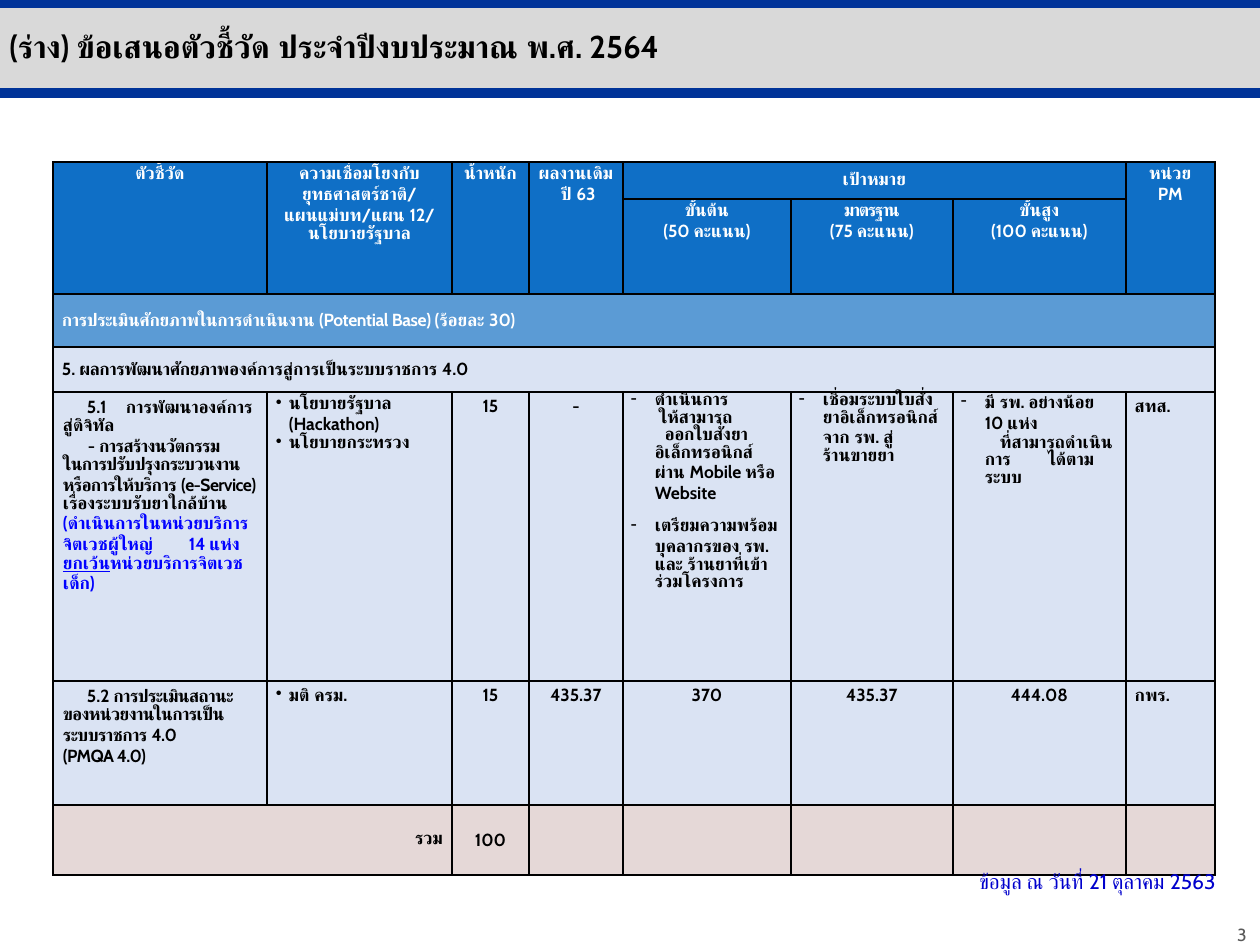
"""Build the slide of proposed indicators for fiscal year 2564."""
import lxml.etree
import pptx
import pptx.dml.color
import pptx.enum.shapes
import pptx.enum.text
import pptx.oxml.ns
import pptx.util

ALIGN = {"l": pptx.enum.text.PP_ALIGN.LEFT, "c": pptx.enum.text.PP_ALIGN.CENTER,
         "r": pptx.enum.text.PP_ALIGN.RIGHT}
MIDDLE = pptx.enum.text.MSO_ANCHOR.MIDDLE
TOP = pptx.enum.text.MSO_ANCHOR.TOP
FONT = "Cabin"
BLUE, BAND, PALE, PINK = "0F6FC6", "5B9BD5", "DAE3F3", "E5D8D7"
NAVY, GREY, NOTE = "003399", "D9D9D9", "0000FF"
TIGHT, SLIGHT = {"spc": -30}, {"spc": -20}


def para(*runs, **opts):
    return runs, opts


def bullet(text, char="•", left=13, after=0):
    return para(text, left=left, first=-left, bullet=char, after=after)


def dash(text, after=8):
    return bullet(text, "-", 24, after)


def more(text, first=0, after=0, **opts):
    return para(text, left=24, first=first, after=after, **opts)


TITLE = "(ร่าง) ข้อเสนอตัวชี้วัด ประจำปีงบประมาณ พ.ศ. 2564"
DATE = "ข้อมูล ณ วันที่ 21 ตุลาคม 2563"
TEXT_BOXES = [
    ((-3, 21, 1086, 50), TITLE, "l", 18, "000000", True, TOP),
    ((975, 910, 284, 50), "3", "r", 10, "595959", False, MIDDLE),
    ((842, 862, 386, 38), DATE, "r", 12, "0000CC", False, TOP),
]
COLUMNS = [214, 185, 77, 94, 168, 162, 173, 89]
ROWS = [37, 95, 53, 45, 289, 124, 70]
ROW_FILLS = [BLUE, BLUE, BAND, PALE, PALE, PALE, PINK]
MERGES = [(0, 0, 1, 0), (0, 1, 1, 1), (0, 2, 1, 2), (0, 3, 1, 3), (0, 4, 0, 6),
          (0, 7, 1, 7), (2, 0, 2, 7), (3, 0, 3, 7), (6, 0, 6, 1)]
MIDDLE_CELLS = [(0, 4), (2, 0), (3, 0), (6, 0), (6, 2)]
DASH_CELLS = [(4, 4), (4, 5), (4, 6)]
LEFT_CELLS = [(2, 0), (3, 0)] + [(r, c) for r in (4, 5) for c in (0, 1, 7)] + DASH_CELLS
CELLS = {
    (0, 0): ["ตัวชี้วัด"],
    (0, 1): ["ความเชื่อมโยงกับ", "ยุทธศาสตร์ชาติ/", "แผนแม่บท/แผน 12/ นโยบายรัฐบาล"],
    (0, 2): ["น้ำหนัก"],
    (0, 3): ["ผลงานเดิม", " ปี 63"],
    (0, 4): ["เป้าหมาย"],
    (0, 7): ["หน่วย PM"],
    (1, 4): ["ขั้นต้น", "(50 คะแนน)"],
    (1, 5): [para(("มาตรฐาน", {"spc": -80})), "(75 คะแนน)"],
    (1, 6): ["ขั้นสูง", "(100 คะแนน)"],
    (2, 0): [para(("การประเมินศักยภาพในการดำเนินงาน (Potential Base) ", SLIGHT), "(ร้อยละ 30)")],
    (3, 0): [para("5. ", ("ผลการพัฒนาศักยภาพ", SLIGHT), "องค์การสู่การเป็นระบบราชการ 4.0")],
    (4, 0): [
        para("5.1 \tการพัฒนาองค์การสู่ดิจิทัล", first=24, tab=126),
        para("- ", ("การสร้างนวัตกรรม", TIGHT), first=25),
        para(("ในการปรับปรุงกระบวนงาน หรือการให้บริการ (e-Service)", TIGHT),
             " เรื่องระบบรับยาใกล้บ้าน"),
        para("(ดำเนินการในหน่วยบริการจิตเวชผู้ใหญ่\t14 แห่ง ", ("ยกเว้น", {"u": True}),
             "หน่วยบริการจิตเวชเด็ก)", color=NOTE, tab=110),
    ],
    (4, 1): [bullet("นโยบายรัฐบาล"), para("(Hackathon)", left=13), bullet("นโยบายกระทรวง")],
    (4, 2): ["15"],
    (4, 3): ["-"],
    (4, 4): [dash("ดำเนินการ", 0), more("ให้สามารถ", 4),
             more("ออกใบสั่งยาอิเล็กทรอนิกส์ผ่าน Mobile หรือ Website", 10, 8),
             dash("เตรียมความพร้อมบุคลากรของ รพ. และ ร้านยาที่เข้าร่วมโครงการ")],
    (4, 5): [dash("เชื่อมระบบใบสั่งยาอิเล็กทรอนิกส์ จาก รพ. สู่", 0), more("ร้านขายยา", 0, 8)],
    (4, 6): [dash("มี รพ. อย่างน้อย", 0), more("10 แห่ง"),
             more("ที่สามารถดำเนินการ\tได้ตามระบบ", 15, 8, tab=104)],
    (4, 7): ["สทส."],
    (5, 0): [para("5.2 ", ("การประเมินสถานะของหน่วยงานในการเป็นระบบราชการ 4.0", TIGHT), first=24),
             para(("(PMQA 4.0)", TIGHT))],
    (5, 1): [bullet("มติ ครม.")],
    (5, 2): ["15"],
    (5, 3): ["435.37"],
    (5, 4): ["370"],
    (5, 5): ["435.37"],
    (5, 6): ["444.08"],
    (5, 7): ["กพร."],
    (6, 0): ["รวม"],
    (6, 2): ["100"],
}


def px(n):
    return pptx.util.Emu(round(n * 914400 / 126))


def rgb(value):
    return pptx.dml.color.RGBColor.from_string(value)


def sub(parent, tag, **attrs):
    e = lxml.etree.SubElement(parent, pptx.oxml.ns.qn(tag))
    for key, value in attrs.items():
        e.set(key, str(value))
    return e


def set_font(font, size, color, bold):
    font.name, font.size, font.bold = FONT, pptx.util.Pt(size), bold
    font.color.rgb = rgb(color)


def write_paragraph(p, item, align, color):
    runs, opts = ((item,), {}) if isinstance(item, str) else item
    pPr = p._p.get_or_add_pPr()
    pPr.set("marL", str(px(opts.get("left", 0))))
    pPr.set("indent", str(px(opts.get("first", 0))))
    if "bullet" in opts:
        sub(pPr, "a:buChar", char=opts["bullet"])
    if "tab" in opts:
        sub(sub(pPr, "a:tabLst"), "a:tab", pos=px(opts["tab"]), algn="l")
    p.alignment = ALIGN[align]
    p.space_after = pptx.util.Pt(opts.get("after", 0))
    set_font(p.font, 10, opts.get("color", color), True)
    for run in runs:
        text, style = (run, {}) if isinstance(run, str) else run
        r = p.add_run()
        r.text = text
        if "u" in style:
            r.font.underline = True
        if "spc" in style:
            r._r.get_or_add_rPr().set("spc", str(style["spc"]))


def style_cell(cell, fill, margins, anchor):
    tcPr = cell._tc.get_or_add_tcPr()
    for side in ("a:lnL", "a:lnR", "a:lnT", "a:lnB"):
        sub(sub(sub(tcPr, side, w=12700), "a:solidFill"), "a:srgbClr", val="000000")
    cell.fill.solid()
    cell.fill.fore_color.rgb = rgb(fill)
    cell.margin_left = cell.margin_right = px(margins[0])
    cell.margin_top = cell.margin_bottom = px(margins[1])
    cell.vertical_anchor = anchor


def add_header(s):
    bar = s.shapes.add_shape(pptx.enum.shapes.MSO_SHAPE.RECTANGLE, 0, px(6), px(1260), px(86))
    bar.shadow.inherit = False
    bar.fill.solid()
    bar.fill.fore_color.rgb = rgb(GREY)
    bar.line.fill.background()
    for y in (93, 3):
        rule = s.shapes.add_connector(pptx.enum.shapes.MSO_CONNECTOR.STRAIGHT,
                                      0, px(y), px(1260), px(y))
        rule.line.color.rgb = rgb(NAVY)
        rule.line.width = pptx.util.Pt(6)
        sub(rule._element.spPr, "a:effectLst")


def add_text(s, box, text, align, size, color, bold, anchor):
    tf = s.shapes.add_textbox(*map(px, box)).text_frame
    tf.word_wrap, tf.vertical_anchor = True, anchor
    p = tf.paragraphs[0]
    p.text, p.alignment = text, ALIGN[align]
    set_font(p.font, size, color, bold)


def add_indicators(s):
    table = s.shapes.add_table(len(ROWS), len(COLUMNS), px(53), px(162),
                               px(sum(COLUMNS)), px(sum(ROWS))).table
    for column, width in zip(table.columns, COLUMNS):
        column.width = px(width)
    for i, height in enumerate(ROWS):
        table.rows[i].height = px(height)
        for j in range(len(COLUMNS)):
            key, cell = (i, j), table.cell(i, j)
            margins = (8, 0) if key in DASH_CELLS else (10, 5) if j == 0 and i in (4, 5) else (9, 4)
            style_cell(cell, ROW_FILLS[i], margins, MIDDLE if key in MIDDLE_CELLS else TOP)
            align = "r" if key == (6, 0) else "l" if key in LEFT_CELLS else "c"
            tf = cell.text_frame
            for n, item in enumerate(CELLS.get(key, [])):
                p = tf.add_paragraph() if n else tf.paragraphs[0]
                write_paragraph(p, item, align, "FFFFFF" if i < 3 else "000000")
    for top, left, bottom, right in MERGES:
        table.cell(top, left).merge(table.cell(bottom, right))


def main():
    prs = pptx.Presentation()
    prs.slide_width, prs.slide_height = px(1260), px(945)
    s = prs.slides.add_slide(prs.slide_layouts[6])
    add_header(s)
    add_indicators(s)
    for item in TEXT_BOXES:
        add_text(s, *item)
    prs.save("out.pptx")


if __name__ == "__main__":
    main()
